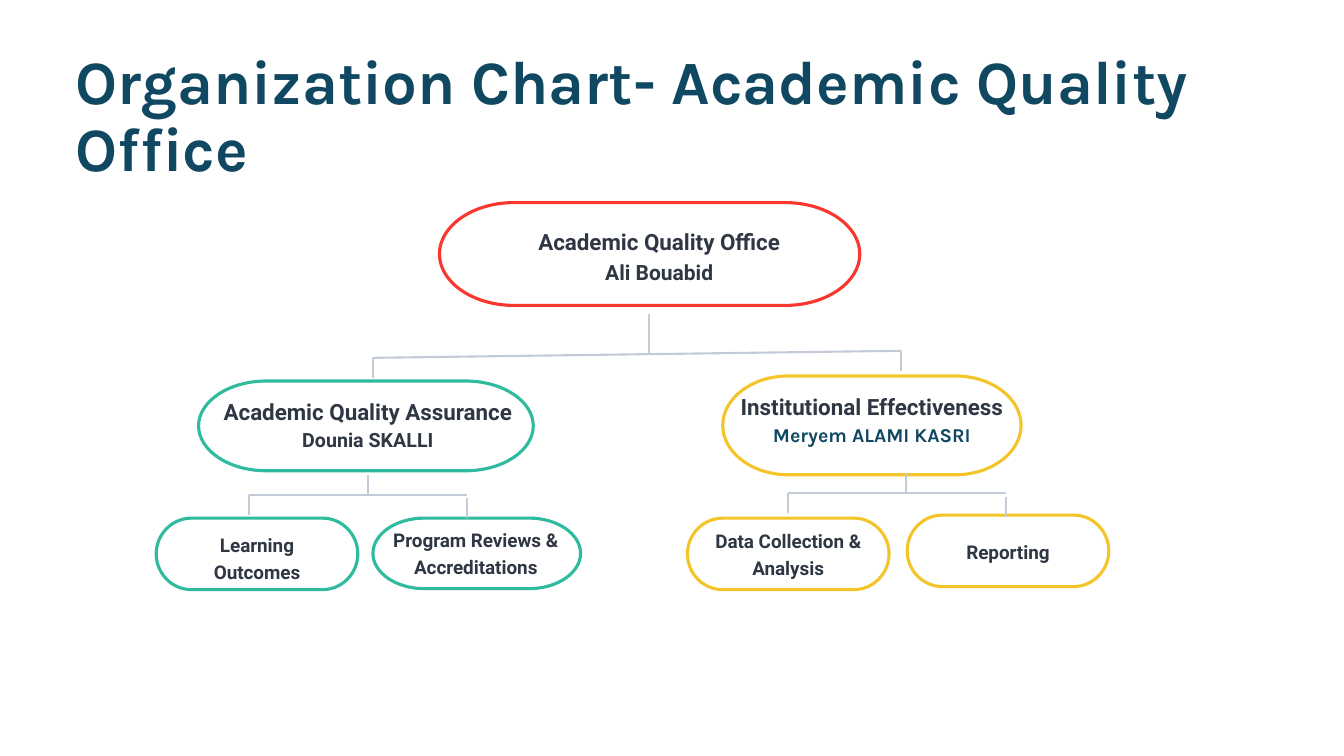
import dataclasses

import pptx
import pptx.dml.color
import pptx.enum.shapes
import pptx.enum.text
import pptx.oxml
import pptx.oxml.ns
import pptx.util

# Grid: square cells of a tenth of an inch
CELL = pptx.util.Inches(0.1)
COLS, ROWS = 133.33, 75
ROUND = 0.55  # handle length of a quarter ellipse


@dataclasses.dataclass(frozen=True)
class Theme:
    head: str = "Karla"
    body: str = "Roboto"
    navy: str = "104862"
    ink: str = "2E3743"
    paper: str = "FFFFFF"
    red: str = "FA372E"
    green: str = "30BB9F"
    gold: str = "F4C52B"
    wire: str = "C3CAD8"
    title: float = 44
    unit: float = 16
    chief: float = 15
    lead: float = 14
    team: float = 13.5
    edge: float = 2.25
    thin: float = 1.5


T = Theme()


def emu(cells):
    return round(cells * CELL)


def tint(code):
    return pptx.dml.color.RGBColor.from_string(code)


def add_text(slide, box, lines, pitch):
    """Centred lines, each (text, size, font, colour), at a fixed pitch."""
    frame = slide.shapes.add_textbox(*map(emu, box)).text_frame
    frame.word_wrap = True
    frame.auto_size = pptx.enum.text.MSO_AUTO_SIZE.SHAPE_TO_FIT_TEXT
    frame.margin_left = frame.margin_right = 0
    frame.margin_top = frame.margin_bottom = 0
    for n, line in enumerate(lines):
        para = frame.add_paragraph() if n else frame.paragraphs[0]
        para.alignment = pptx.enum.text.PP_ALIGN.CENTER
        para.line_spacing = pptx.util.Pt(pitch)
        add_run(para, *line)


def add_run(para, text, size, font=T.body, color=T.ink):
    run = para.add_run()
    run.text = text
    run.font.size = pptx.util.Pt(size)
    run.font.name = font
    run.font.bold = True
    run.font.color.rgb = tint(color)


def add_title(slide, box, text):
    frame = slide.shapes.add_textbox(*map(emu, box)).text_frame
    frame.word_wrap = True
    frame.vertical_anchor = pptx.enum.text.MSO_ANCHOR.MIDDLE
    para = frame.paragraphs[0]
    para.line_spacing = 0.9
    add_run(para, text, T.title, T.head, T.navy)


def bend_ends(pill):
    """Turn the four slanted sides of the outline into quarter ellipses."""
    qn = pptx.oxml.ns.qn
    dots = list(pill._element.spPr.iter(qn("a:pt")))
    spots = [(int(dot.get("x")), int(dot.get("y"))) for dot in dots]
    for n, flat in ((2, True), (3, False), (5, True), (6, False)):
        (x, y), (u, v) = spots[n - 1], spots[n]
        across, down = round((u - x) * ROUND), round((v - y) * ROUND)
        if flat:
            grips = (x + across, y), (u, v - down)
        else:
            grips = (x, y + down), (u - across, v)
        side = dots[n].getparent()
        side.tag = qn("a:cubicBezTo")
        for at, (gx, gy) in enumerate(grips):
            grip = side.makeelement(qn("a:pt"), {"x": str(gx), "y": str(gy)})
            side.insert(at, grip)


def add_pill(slide, box, bend, color):
    """Outline with half-ellipse ends that are bend cells wide."""
    left, top, wide, high = box
    right, foot, mid = left + wide, top + high, top + high / 2
    start = (left + bend, top)
    rest = [(right - bend, top), (right, mid), (right - bend, foot),
            (left + bend, foot), (left, mid), start]
    draft = slide.shapes.build_freeform(*map(emu, start))
    draft.add_line_segments([(emu(x), emu(y)) for x, y in rest], close=True)
    pill = draft.convert_to_shape()
    bend_ends(pill)
    pill.shadow.inherit = False
    pill.fill.solid()
    pill.fill.fore_color.rgb = tint(T.paper)
    pill.line.color.rgb = tint(color)
    pill.line.width = pptx.util.Pt(T.edge)


def add_wire(slide, *ends):
    kind = pptx.enum.shapes.MSO_CONNECTOR.STRAIGHT
    wire = slide.shapes.add_connector(kind, *map(emu, ends))
    wire.line.color.rgb = tint(T.wire)
    wire.line.width = pptx.util.Pt(T.thin)
    wire._element.spPr.append(pptx.oxml.parse_xml(
        '<a:effectLst xmlns:a='
        '"http://schemas.openxmlformats.org/drawingml/2006/main"/>'))


def add_fork(slide, west, east, stem, gap, drop=2):
    """Bar from west to east, a stem (x, top, foot) and a drop at each end."""
    add_wire(slide, *west, *east)
    x, top, foot = stem
    add_wire(slide, x, top, x, foot)
    for (x, y), skip in ((west, 0), (east, gap)):
        add_wire(slide, x, y + skip, x, y + skip + drop)


def main():
    deck = pptx.Presentation()
    deck.slide_width, deck.slide_height = emu(COLS), emu(ROWS)
    slide = deck.slides.add_slide(deck.slide_layouts[6])

    add_title(slide, (6.5, 6.8, 124.8, 9.8),
              "Organization Chart- Academic Quality Office")

    # Units: pill box, end width, colour, text box, line pitch, lines
    units = [
        ((43.6, 20.1, 41.7, 10.2), 7.4, T.red, (45.6, 22.4, 39.6, 5.7), 21.1,
         [("Academic Quality Office", T.unit), ("Ali Bouabid", T.chief)]),
        ((19.7, 37.8, 33.2, 8.9), 6.7, T.green, (20.7, 39.5, 31.6, 5.2), 18.9,
         [("Academic Quality Assurance", T.unit), ("Dounia SKALLI", T.lead)]),
        ((15.5, 51.4, 20, 7.1), 3.5, T.green, (17, 52.6, 17, 5), 18.9,
         [("Learning", T.team), ("Outcomes", T.team)]),
        ((37, 51.4, 20.6, 7), 5.1, T.green, (37.5, 52.1, 19.4, 5.1), 18.9,
         [("Program Reviews &", T.team), ("Accreditations", T.team)]),
        ((71.7, 37.3, 29.6, 9.8), 6.5, T.gold, (72.5, 39, 28, 7.8), 18.9,
         [("Institutional Effectiveness", T.unit),
          ("Meryem ALAMI KASRI", T.lead, T.head, T.navy)]),
        ((68.2, 51.4, 20, 7.1), 3.5, T.gold, (69.7, 52.2, 17, 5), 18.9,
         [("Data Collection & Analysis", T.team)]),
        ((90, 51.1, 20, 7.1), 3.5, T.gold, (91.5, 53.3, 17, 2.5), 18.9,
         [("Reporting", T.team)]),
    ]
    for pill, bend, color, box, pitch, lines in units:
        add_pill(slide, pill, bend, color)
        add_text(slide, box, lines, pitch)

    # Forks between the levels
    add_fork(slide, (37, 35.5), (89.4, 34.8), (64.4, 31.2, 35.2), 0)
    add_fork(slide, (24.7, 49.1), (46.3, 49.1), (36.5, 47.1, 49.1), 0.3)
    add_fork(slide, (78.2, 48.9), (99.8, 48.9), (89.9, 46.9, 48.9), 0.4)

    deck.save("out.pptx")


if __name__ == "__main__":
    main()
